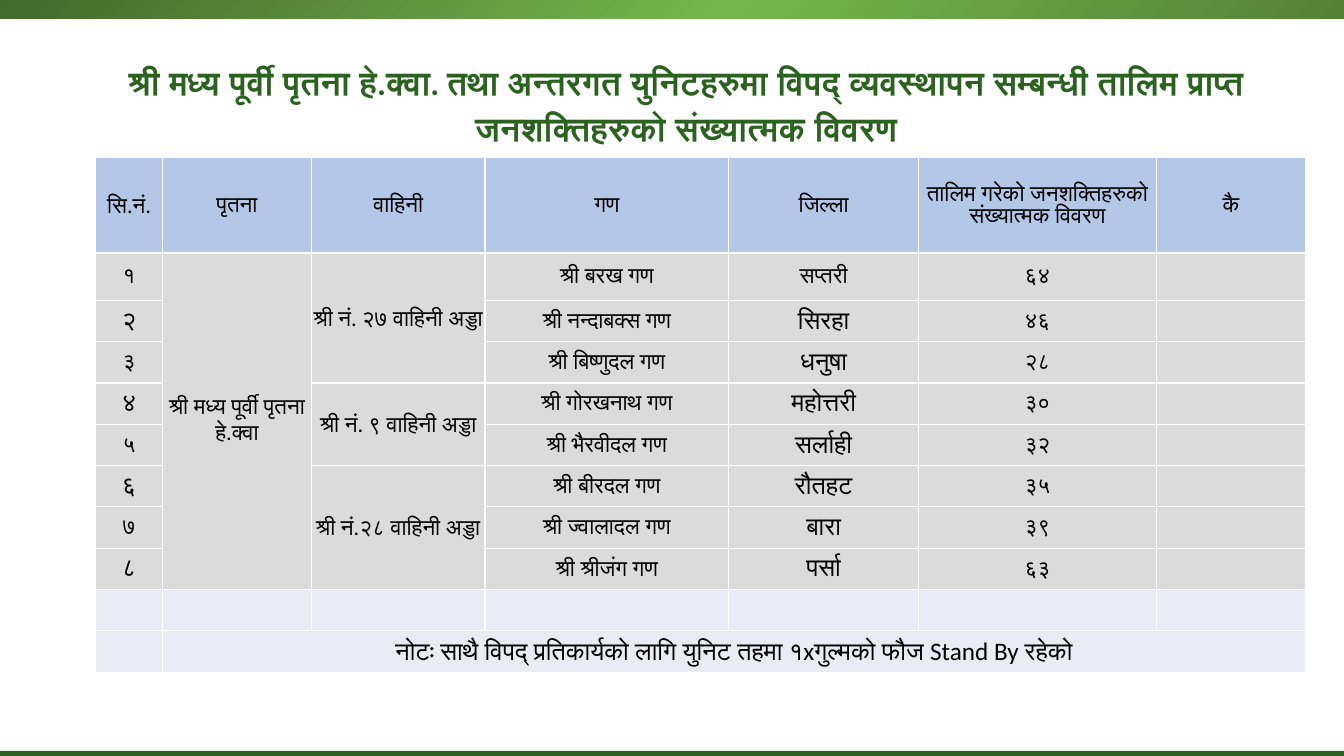
from lxml.etree import SubElement
from pptx import Presentation
from pptx.dml.color import RGBColor
from pptx.enum.shapes import MSO_SHAPE
from pptx.enum.text import MSO_ANCHOR, MSO_AUTO_SIZE, PP_ALIGN
from pptx.oxml import parse_xml
from pptx.oxml.ns import nsdecls, qn
from pptx.util import Inches, Pt

FONT = "Calibri"
GREEN, HEADER, BODY, FOOTER = "2C6220", "B4C7E7", "DBDBDB", "E9EBF5"
TITLE = ("श्री मध्य पूर्वी पृतना हे.क्वा. तथा अन्तरगत युनिटहरुमा विपद् व्यवस्थापन "
         "सम्बन्धी तालिम प्राप्त जनशक्तिहरुको संख्यात्मक विवरण")
HEADINGS = ["सि.नं.", "पृतना", "वाहिनी", "गण", "जिल्ला",
            "तालिम गरेको जनशक्तिहरुको संख्यात्मक विवरण", "कै"]
DIVISION = "श्री मध्य पूर्वी पृतना हे.क्वा"
BRIGADES = [("श्री नं. २७ वाहिनी अड्डा", 3), ("श्री नं. ९ वाहिनी अड्डा", 2),
            ("श्री नं.२८ वाहिनी अड्डा", 3)]
UNITS = [("१", "श्री बरख गण", "सप्तरी", "६४"),
         ("२", "श्री नन्दाबक्स गण", "सिरहा", "४६"),
         ("३", "श्री बिष्णुदल गण", "धनुषा", "२८"),
         ("४", "श्री गोरखनाथ गण", "महोत्तरी", "३०"),
         ("५", "श्री भैरवीदल गण", "सर्लाही", "३२"),
         ("६", "श्री बीरदल गण", "रौतहट", "३५"),
         ("७", "श्री ज्वालादल गण", "बारा", "३९"),
         ("८", "श्री श्रीजंग गण", "पर्सा", "६३")]
NOTE = "नोटः साथै विपद् प्रतिकार्यको लागि युनिट तहमा १xगुल्मको फौज Stand By रहेको"
COLUMN_WIDTHS = [0.66, 1.48, 1.72, 2.42, 1.88, 2.36, 1.48]
ROW_HEIGHTS = [0.95, 0.47] + [0.41] * 9


def color(hex_code):
    """Return the colour for a hex string."""
    return RGBColor.from_string(hex_code)


def add_band(slide, left, top, width, height):
    """Add a plain green band across the slide."""
    band = slide.shapes.add_shape(MSO_SHAPE.RECTANGLE, Inches(left), Inches(top),
                                  Inches(width), Inches(height))
    band.shadow.inherit = False
    band.line.fill.background()
    band.fill.solid()
    band.fill.fore_color.rgb = color(GREEN)
    return band


def add_gradient_band(slide, left, top, width, height):
    """Add a band with a radial gradient focused on its lower right corner."""
    band = add_band(slide, left, top, width, height)
    stops = "".join(f'<a:gs pos="{position * 1000}"><a:srgbClr val="{shade}"/></a:gs>'
                    for position, shade in [(0, "548235"), (46, "76B54C"), (100, "43682B")])
    gradient = parse_xml(f'<a:gradFill {nsdecls("a")} rotWithShape="1"><a:gsLst>{stops}</a:gsLst>'
                         '<a:path path="circle"><a:fillToRect l="100000" t="100000"/></a:path>'
                         '</a:gradFill>')
    properties = band._element.spPr
    properties.replace(properties.find(qn("a:solidFill")), gradient)


def place_title(slide, left, top, width, height):
    """Place and format the slide title in the given box."""
    title = slide.shapes.title
    title.left, title.top = Inches(left), Inches(top)
    title.width, title.height = Inches(width), Inches(height)
    frame = title.text_frame
    frame.text = TITLE
    frame.word_wrap = True
    frame.auto_size = MSO_AUTO_SIZE.NONE
    frame.vertical_anchor = MSO_ANCHOR.MIDDLE
    frame.margin_bottom = Inches(0.35)
    paragraph = frame.paragraphs[0]
    paragraph.alignment = PP_ALIGN.CENTER
    paragraph.line_spacing = 1.15
    paragraph.space_after = Pt(10)
    paragraph.font.name = FONT
    paragraph.font.size = Pt(24)
    paragraph.font.bold = True
    paragraph.font.color.rgb = color(GREEN)


def style_cell(cell, fill):
    """Give a cell white borders, a fill, narrow margins and middle anchoring."""
    properties = cell._tc.get_or_add_tcPr()
    for side in ("lnL", "lnR", "lnT", "lnB"):
        border = SubElement(properties, qn(f"a:{side}"), w=str(Pt(1)))
        SubElement(SubElement(border, qn("a:solidFill")), qn("a:srgbClr"), val="FFFFFF")
    cell.fill.solid()
    cell.fill.fore_color.rgb = color(fill)
    cell.margin_left = cell.margin_right = cell.margin_top = Inches(0.01)
    cell.margin_bottom = 0
    cell.vertical_anchor = MSO_ANCHOR.MIDDLE


def write_cell(cell, text, size=16):
    """Write centred black text into a cell."""
    cell.text = text
    paragraph = cell.text_frame.paragraphs[0]
    paragraph.alignment = PP_ALIGN.CENTER
    paragraph.font.name = FONT
    paragraph.font.size = Pt(size)
    paragraph.font.color.rgb = color("000000")


def add_training_table(slide, left, top, width, height):
    """Add the table of trained personnel by unit."""
    frame = slide.shapes.add_table(len(ROW_HEIGHTS), len(COLUMN_WIDTHS), Inches(left),
                                   Inches(top), Inches(width), Inches(height))
    table = frame.table
    table.first_row = table.horz_banding = False
    for column, column_width in zip(table.columns, COLUMN_WIDTHS):
        column.width = Inches(column_width)
    fills = [HEADER] + [BODY] * len(UNITS) + [FOOTER] * 2
    for row, row_height, fill in zip(table.rows, ROW_HEIGHTS, fills):
        row.height = Inches(row_height)
        for cell in row.cells:
            style_cell(cell, fill)

    for index, heading in enumerate(HEADINGS):
        write_cell(table.cell(0, index), heading)
    for row, (serial, unit, district, count) in enumerate(UNITS, start=1):
        write_cell(table.cell(row, 0), serial, 16 if row % 2 else 18)
        write_cell(table.cell(row, 3), unit)
        write_cell(table.cell(row, 4), district, 16 if row == 1 else 18)
        write_cell(table.cell(row, 5), count)

    table.cell(1, 1).merge(table.cell(len(UNITS), 1))
    write_cell(table.cell(1, 1), DIVISION)
    first = 1
    for brigade, span in BRIGADES:
        table.cell(first, 2).merge(table.cell(first + span - 1, 2))
        write_cell(table.cell(first, 2), brigade)
        first += span
    last = len(ROW_HEIGHTS) - 1
    table.cell(last, 1).merge(table.cell(last, len(COLUMN_WIDTHS) - 1))
    write_cell(table.cell(last, 1), NOTE, 18)


def main():
    """Build and save the presentation."""
    presentation = Presentation()
    presentation.slide_width, presentation.slide_height = Inches(13.33), Inches(7.5)
    slide = presentation.slides.add_slide(presentation.slide_layouts[5])
    add_band(slide, -0.01, 7.45, 13.34, 0.05)
    add_gradient_band(slide, -0.01, -0.03, 13.34, 0.21)
    place_title(slide, 0.81, 0.84, 11.99, 0.65)
    add_training_table(slide, 0.95, 1.56, sum(COLUMN_WIDTHS), sum(ROW_HEIGHTS))
    presentation.save("out.pptx")


if __name__ == "__main__":
    main()
